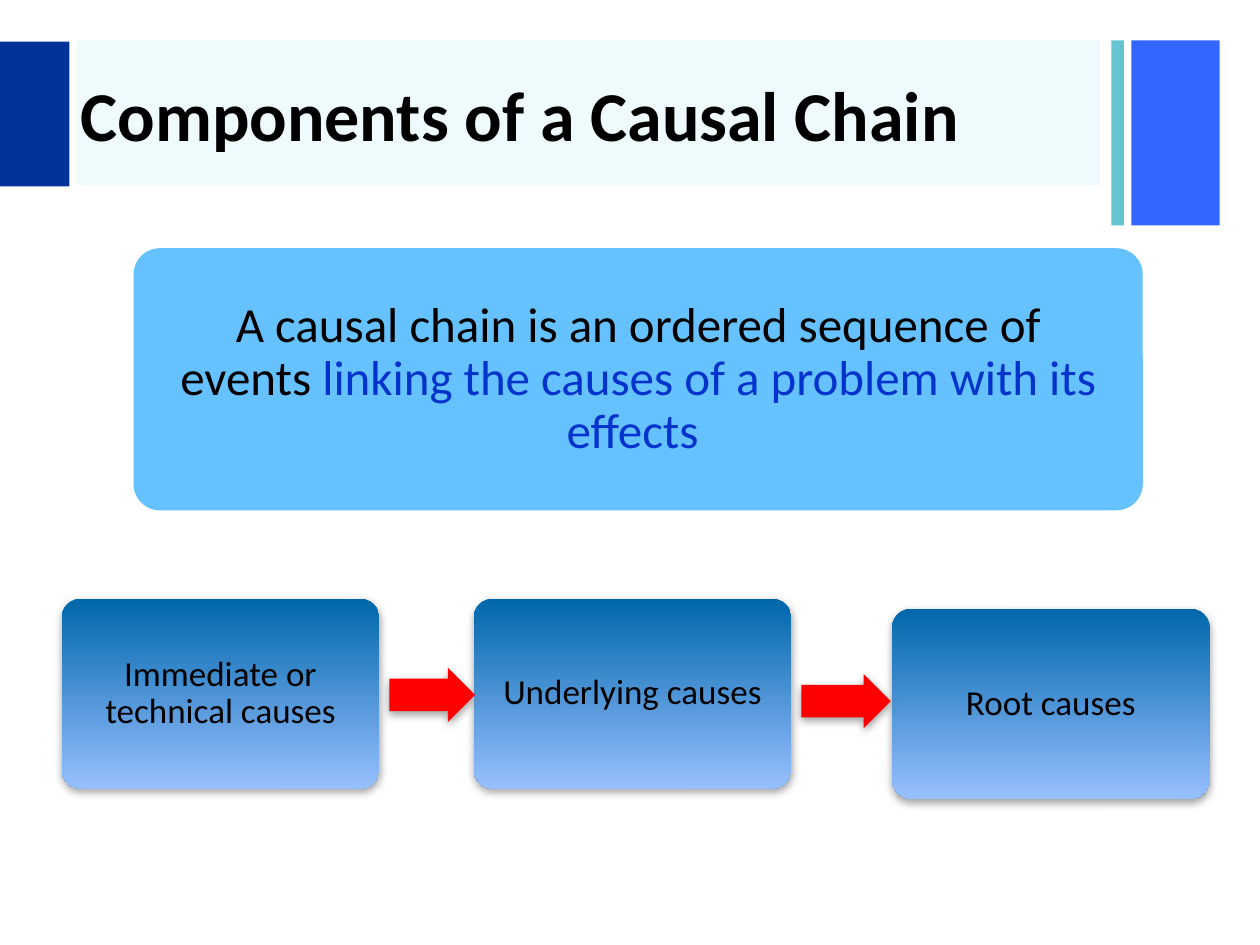
from dataclasses import dataclass
from typing import Optional

from lxml import etree
from pptx import Presentation
from pptx.dml.color import RGBColor
from pptx.enum import shapes as kinds, text as t
from pptx.oxml import ns
from pptx.util import Inches, Pt

BLACK = RGBColor(0x00, 0x00, 0x00)
NAVY = RGBColor(0x00, 0x33, 0x99)
ROYAL = RGBColor(0x33, 0x66, 0xFF)
TEAL = RGBColor(0x65, 0xC4, 0xD2)
AQUA = RGBColor(0x14, 0xC5, 0xD0)
SKY = RGBColor(0x66, 0xC2, 0xFF)
EMPHASIS = RGBColor(0x00, 0x33, 0xCC)
RED = RGBColor(0xFF, 0x00, 0x00)
GRADIENT = (RGBColor(0x00, 0x67, 0xAB), RGBColor(0x97, 0xBF, 0xFF))
FONT = "Calibri"
Kind = kinds.MSO_SHAPE


@dataclass
class Frame:
    left: float
    top: float
    width: float
    height: float

    def lengths(self) -> list:
        return [Inches(v) for v in (self.left, self.top, self.width, self.height)]


@dataclass
class Bar:
    frame: Frame
    color: RGBColor
    opacity: Optional[int] = None


@dataclass
class Cause:
    label: str
    left: float
    top: float


BARS = [
    Bar(Frame(8.98, 0.32, 0.7, 1.47), ROYAL),
    Bar(Frame(8.82, 0.32, 0.1, 1.47), TEAL),
    Bar(Frame(0.61, 0.32, 8.12, 1.15), AQUA, opacity=7),
    Bar(Frame(0, 0.33, 0.55, 1.15), NAVY),
]
CAUSES = [
    Cause("Immediate or technical causes", 0.49, 4.75),
    Cause("Underlying causes", 3.76, 4.75),
    Cause("Root causes", 7.08, 4.83),
]
ARROWS = [Frame(3.09, 5.3, 0.68, 0.43), Frame(6.36, 5.35, 0.71, 0.43)]


def add_plain(slide, kind: Kind, frame: Frame, color: Optional[RGBColor] = None):
    """Add a shape without outline or shadow, filled if a colour is given."""
    shape = slide.shapes.add_shape(kind, *frame.lengths())
    shape.shadow.inherit = False
    shape.line.fill.background()
    if color is not None:
        shape.fill.solid()
        shape.fill.fore_color.rgb = color
    return shape


def add_child(parent, tag: str, **attributes: str):
    return etree.SubElement(parent, ns.qn(tag), **attributes)


def cast_shadow(shape) -> None:
    effects = shape._element.spPr.find(ns.qn("a:effectLst"))
    shadow = add_child(effects, "a:outerShdw", blurRad=str(Pt(5)), dist=str(Pt(2)),
                       dir="5400000", rotWithShape="0")
    color = add_child(shadow, "a:srgbClr", val="808080")
    add_child(color, "a:alpha", val="75000")


def add_bar(slide, bar: Bar) -> None:
    shape = add_plain(slide, Kind.RECTANGLE, bar.frame, bar.color)
    if bar.opacity is not None:
        color = shape._element.spPr.find(".//" + ns.qn("a:srgbClr"))
        add_child(color, "a:alpha", val=str(bar.opacity * 1000))


def write_centred(shape, spans: list, size: int, inset: float) -> None:
    """Write (text, colour) spans as one centred paragraph."""
    box = shape.text_frame
    box.word_wrap = True
    box.vertical_anchor = t.MSO_ANCHOR.MIDDLE
    box.margin_left = box.margin_right = Inches(inset)
    box.margin_top = box.margin_bottom = Inches(inset)
    para = box.paragraphs[0]
    para.alignment = t.PP_ALIGN.CENTER
    para.line_spacing = 0.9
    para.font.name, para.font.size = FONT, Pt(size)
    for words, color in spans:
        span = para.add_run()
        span.text = words
        span.font.color.rgb = color


def add_cause(slide, cause: Cause) -> None:
    shape = add_plain(slide, Kind.ROUNDED_RECTANGLE,
                      Frame(cause.left, cause.top, 2.52, 1.51))
    shape.adjustments[0] = 0.1
    shape.fill.gradient()
    shape.fill.gradient_angle = 270
    for stop, color in zip(shape.fill.gradient_stops, GRADIENT):
        stop.color.rgb = color
    cast_shadow(shape)
    write_centred(shape, [(cause.label, BLACK)], 20, 0.12)


def add_arrow(slide, frame: Frame) -> None:
    arrow = add_plain(slide, Kind.RIGHT_ARROW, frame, RED)
    arrow.adjustments[0], arrow.adjustments[1] = 0.6, 0.5
    cast_shadow(arrow)


def set_title(slide, words: str) -> None:
    title = slide.shapes.title
    title.left, title.top, title.width, title.height = Frame(0.54, 0.34, 8.27, 1.12).lengths()
    title.text_frame.text = words
    title.text_frame.vertical_anchor = t.MSO_ANCHOR.MIDDLE
    para = title.text_frame.paragraphs[0]
    para.alignment = t.PP_ALIGN.LEFT
    para.font.name, para.font.size, para.font.bold = FONT, Pt(40), True
    para.font.color.rgb = BLACK
    # Bring the title in front of the header bars
    slide.shapes._spTree.append(title._element)


def main() -> None:
    deck = Presentation()
    deck.slide_width, deck.slide_height = Inches(10), Inches(7.5)
    page = deck.slides.add_slide(deck.slide_layouts[5])

    # Header
    for bar in BARS:
        add_bar(page, bar)
    set_title(page, "Components of a Causal Chain")

    # Definition
    definition = add_plain(page, Kind.ROUNDED_RECTANGLE, Frame(1.06, 1.97, 8.01, 2.08), SKY)
    definition.adjustments[0] = 0.1
    write_centred(definition, [
        ("A causal chain is an ordered sequence of events ", BLACK),
        ("linking the causes of a problem with its effects ", EMPHASIS),
    ], 28, 0.27)

    # Chain of causes
    for cause in CAUSES:
        add_cause(page, cause)
    for frame in ARROWS:
        add_arrow(page, frame)

    deck.save("out.pptx")


if __name__ == "__main__":
    main()
